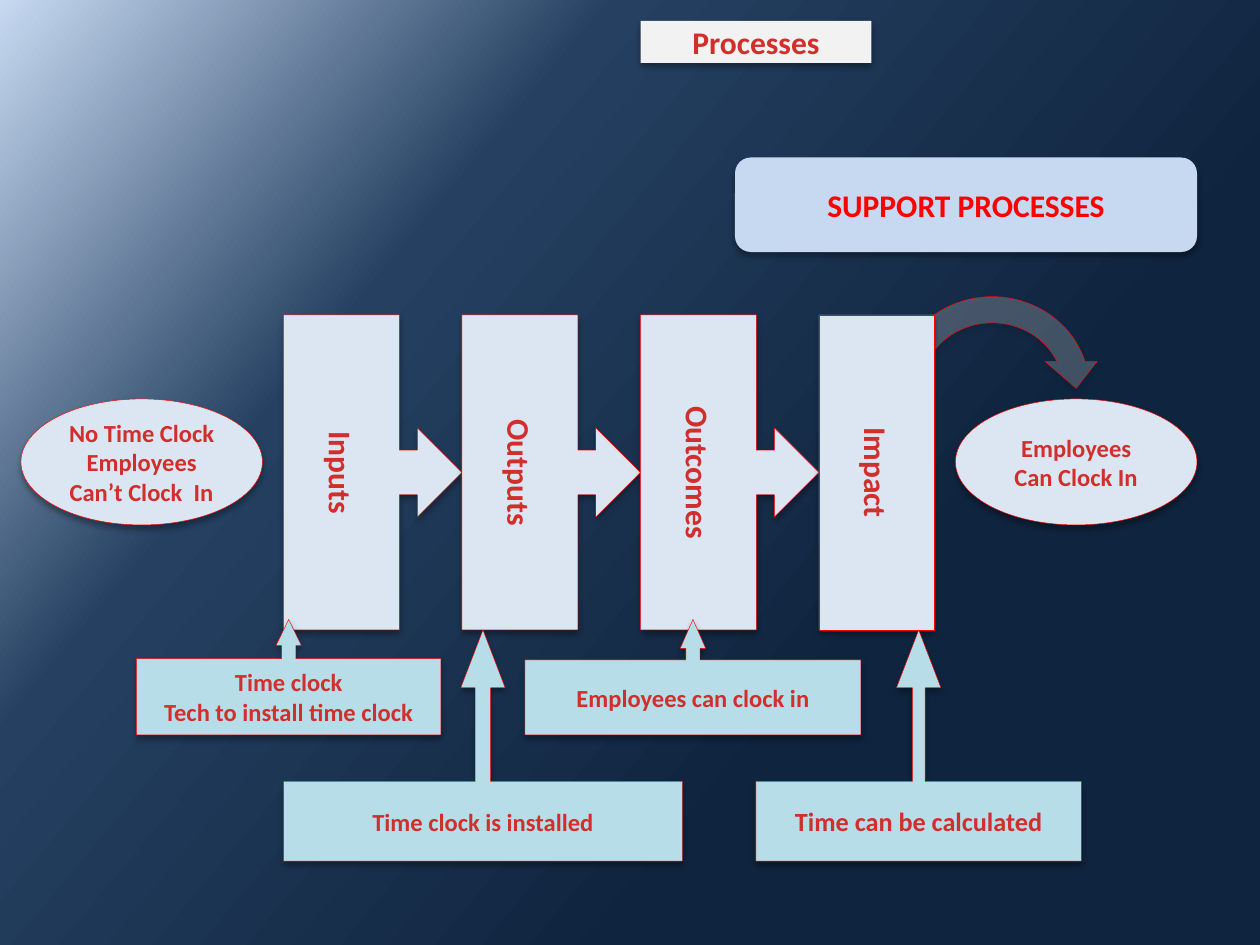
"""Build the time clock process slide: stages, explanations and end states."""
from lxml.etree import SubElement
from pptx import Presentation
from pptx.dml.color import RGBColor
from pptx.enum.shapes import MSO_SHAPE
from pptx.enum.text import MSO_ANCHOR, MSO_AUTO_SIZE, PP_ALIGN
from pptx.oxml.ns import qn
from pptx.util import Inches, Pt

PALE_BLUE = RGBColor(0xDC, 0xE6, 0xF2)
SKY_BLUE = RGBColor(0xC6, 0xD9, 0xF1)
AQUA = RGBColor(0xB7, 0xDE, 0xE8)
LIGHT_GREY = RGBColor(0xF2, 0xF2, 0xF2)
RED = RGBColor(0xFF, 0x00, 0x00)
BRICK = RGBColor(0xD0, 0x2F, 0x2C)
NAVY = RGBColor(0x25, 0x40, 0x61)
MIDNIGHT = RGBColor(0x0F, 0x24, 0x3E)
BLACK = RGBColor(0x00, 0x00, 0x00)

FONT = "Calibri"
CELL = Inches(1) / 12
BACKDROP = [(0, SKY_BLUE), (30, NAVY), (69, MIDNIGHT), (100, MIDNIGHT)]
BACKDROP_ANGLE = 40

TITLE = ("Processes", (61, 2, 22, 4))
SUPPORT = ("SUPPORT PROCESSES", (70, 15, 44, 9))
STAGES = ["Inputs", "Outputs", "Outcomes", "Impact"]
STAGE_LEFT, STAGE_TOP, STAGE_STEP, STAGE_BODY, STAGE_HEIGHT = 27, 30, 17, 11, 30
STATES = [
    ("No Time Clock Employees Can’t Clock  In", 2),
    ("Employees Can Clock In", 91),
]
STATE_TOP, STATE_WIDTH, STATE_HEIGHT = 38, 23, 12
RETURN_ARROW = ((84, 27, 21, 20), (0.125, 11.42, 204.58, 108.41, 0.125))
SHORT_ROW, TALL_ROW = (59, 11), (60, 22)
EXPLANATIONS = [
    ("Time clock\nTech to install time clock", 13, 29, SHORT_ROW, 14, (0.122, 0.11, 0.227, 0.661)),
    ("Time clock is installed", 27, 38, TALL_ROW, 14, (0.067, 0.096, 0.25, 0.344)),
    ("Employees can clock in", 50, 32, SHORT_ROW, 14, (0.122, 0.11, 0.25, 0.65)),
    ("Time can be calculated", 72, 31, TALL_ROW, 15, (0.055, 0.096, 0.25, 0.344)),
]


def grid(box):
    return [round(cells * CELL) for cells in box]


def add_color(parent, color, alpha=None):
    node = SubElement(parent, qn("a:srgbClr"), val=str(color))
    if alpha is not None:
        SubElement(node, qn("a:alpha"), val=str(alpha * 1000))


def paint_backdrop(slide):
    fill = slide.background.fill
    fill.gradient()
    fill.gradient_angle = 360 - BACKDROP_ANGLE
    stops = slide.element.find(".//" + qn("a:gsLst"))
    for stop in list(stops):
        stops.remove(stop)
    for position, color in BACKDROP:
        add_color(SubElement(stops, qn("a:gs"), pos=str(position * 1000)), color)


def style(part, color, outlined=True):
    part.fill.solid()
    part.fill.fore_color.rgb = color
    if outlined:
        part.line.color.rgb = RED
        part.line.width = Pt(0.25)
    else:
        part.line.fill.background()
    part.shadow.inherit = False
    effects = part.element.spPr.find(qn("a:effectLst"))
    shadow = SubElement(
        effects, qn("a:outerShdw"), blurRad=str(Pt(3.5)), dist=str(Pt(2.2)),
        dir=str(90 * 60000), algn="ctr", rotWithShape="0")
    add_color(shadow, BLACK, 32)


def write(part, wording, size, color=BRICK, vertical=False):
    frame = part.text_frame
    frame.text = wording
    frame.word_wrap = True
    frame.auto_size = MSO_AUTO_SIZE.NONE
    frame.vertical_anchor = MSO_ANCHOR.MIDDLE
    if vertical:
        part.element.txBody.find(qn("a:bodyPr")).set("vert", "vert")
    for paragraph in frame.paragraphs:
        paragraph.alignment = PP_ALIGN.CENTER
        font = paragraph.runs[0].font
        font.name, font.size, font.bold = FONT, Pt(size), True
        font.color.rgb = color


def add_part(slide, outline, box, color, adjustments=(), outlined=True):
    part = slide.shapes.add_shape(outline, *grid(box))
    for index, value in enumerate(adjustments):
        part.adjustments[index] = value
    style(part, color, outlined)
    return part


def add_title(slide):
    wording, box = TITLE
    title = slide.shapes.title
    title.left, title.top, title.width, title.height = grid(box)
    geometry = SubElement(title.element.spPr, qn("a:prstGeom"), prst="roundRect")
    SubElement(geometry, qn("a:avLst"))
    style(title, LIGHT_GREY, outlined=False)
    write(title, wording, 18)


def add_return_arrow(slide):
    box, adjustments = RETURN_ARROW
    arrow = add_part(slide, MSO_SHAPE.CIRCULAR_ARROW, box, LIGHT_GREY, adjustments)
    tint = arrow.element.spPr.find(qn("a:solidFill")).find(qn("a:srgbClr"))
    SubElement(tint, qn("a:alpha"), val="23000")


def add_stages(slide):
    for index, wording in enumerate(STAGES):
        last = index == len(STAGES) - 1
        outline = MSO_SHAPE.RECTANGLE if last else MSO_SHAPE.RIGHT_ARROW_CALLOUT
        width = STAGE_BODY if last else STAGE_STEP
        box = (STAGE_LEFT + index * STAGE_STEP, STAGE_TOP, width, STAGE_HEIGHT)
        write(add_part(slide, outline, box, PALE_BLUE), wording, 18, vertical=True)


def main():
    deck = Presentation()
    deck.slide_width, deck.slide_height = Inches(10), Inches(7.5)
    slide = deck.slides.add_slide(deck.slide_layouts[5])
    paint_backdrop(slide)
    add_title(slide)
    add_return_arrow(slide)
    add_stages(slide)
    for wording, left in STATES:
        box = (left, STATE_TOP, STATE_WIDTH, STATE_HEIGHT)
        write(add_part(slide, MSO_SHAPE.OVAL, box, PALE_BLUE), wording, 14)
    wording, box = SUPPORT
    support = add_part(slide, MSO_SHAPE.ROUNDED_RECTANGLE, box, SKY_BLUE, outlined=False)
    write(support, wording, 18, RED)
    for wording, left, width, (top, height), size, adjustments in EXPLANATIONS:
        box = (left, top, width, height)
        callout = add_part(slide, MSO_SHAPE.UP_ARROW_CALLOUT, box, AQUA, adjustments)
        write(callout, wording, size)
    deck.save("out.pptx")


if __name__ == "__main__":
    main()
